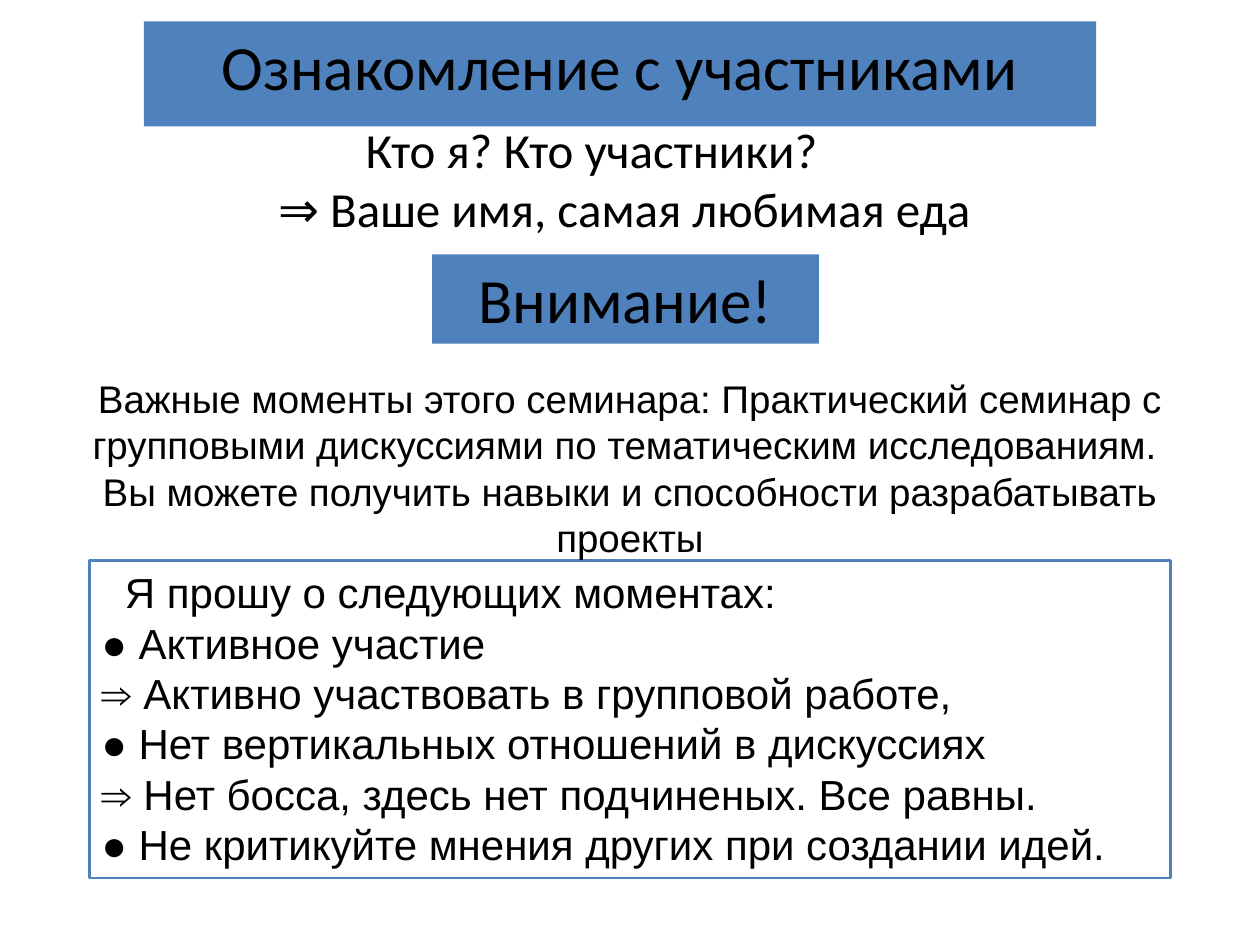
import pptx
import pptx.util
import pptx.dml.color
import pptx.enum.shapes
import pptx.enum.text

Cm, Pt = pptx.util.Cm, pptx.util.Pt
RGB = pptx.dml.color.RGBColor
ALIGN = pptx.enum.text.PP_ALIGN
BLUE = RGB(0x4F, 0x81, 0xBD)
BLACK = RGB(0, 0, 0)

# Content: each line is its text, or (text, left indent in cm)
TITLE = ["Ознакомление с участниками"]
INTRO = [("Кто я? Кто участники?", 4.63), "⇒ Ваше имя, самая любимая еда"]
ALERT = ["Внимание!"]
POINTS = [
    "Важные моменты этого семинара: Практический семинар с групповыми "
    "дискуссиями по тематическим исследованиям. ",
    "Вы можете получить навыки и способности разрабатывать проекты",
]
RULES = [
    ("Я прошу о следующих моментах:", 0.47),
    "● Активное участие",
    "⇒ Активно участвовать в групповой работе,",
    "● Нет вертикальных отношений в дискуссиях",
    "⇒ Нет босса, здесь нет подчиненых. Все равны.",
    "● Не критикуйте мнения других при создании идей.",
]

# Places in cm: left, top, width, height
BANNER = (2.9, 0.43, 19.2, 1.8)
ASK = (2.49, 2.29, 20.19, 2.64)
FRAME = (1.8, 11.3, 21.8, 6.4)
NOTICE = (8.71, 5.13, 7.8, 1.8)
BODY = (0.3, 7.44, 24.8, 4.01)


def write(shape, lines, size, font, align=ALIGN.CENTER):
    frame = shape.text_frame
    frame.word_wrap = True
    frame.auto_size = pptx.enum.text.MSO_AUTO_SIZE.SHAPE_TO_FIT_TEXT
    frame.vertical_anchor = pptx.enum.text.MSO_ANCHOR.TOP
    for i, line in enumerate(lines):
        para = frame.add_paragraph() if i else frame.paragraphs[0]
        para.alignment = align
        if isinstance(line, tuple):
            line, left = line
            para.alignment = ALIGN.LEFT
            para._p.get_or_add_pPr().set("marL", str(Cm(left)))
        run = para.add_run()
        run.text = line
        run.font.size = Pt(size)
        run.font.name = font
        run.font.color.rgb = BLACK


def fill(shape):
    shape.fill.solid()
    shape.fill.fore_color.rgb = BLUE
    shape.line.fill.background()


def add_rect(place):
    kind = pptx.enum.shapes.MSO_SHAPE.RECTANGLE
    shape = slide.shapes.add_shape(kind, *map(Cm, place))
    shape.shadow.inherit = False
    return shape


deck = pptx.Presentation()
deck.slide_width, deck.slide_height = Cm(25.4), Cm(19.05)
slide = deck.slides.add_slide(deck.slide_layouts[5])

# Title banner
title = slide.shapes.title
title.left, title.top, title.width, title.height = map(Cm, BANNER)
fill(title)
write(title, TITLE, 36, "Calibri")

# Introductions
write(slide.shapes.add_textbox(*map(Cm, ASK)), INTRO, 28, "Calibri")

# Framed requests
box = add_rect(FRAME)
box.fill.background()
box.line.color.rgb = BLUE
box.line.width = Pt(1.5)
write(box, RULES, 24, "Arial", ALIGN.LEFT)

# Attention banner
alert = add_rect(NOTICE)
fill(alert)
write(alert, ALERT, 36, "Calibri")

# Key points
write(slide.shapes.add_textbox(*map(Cm, BODY)), POINTS, 22, "Arial")

deck.save("out.pptx")
